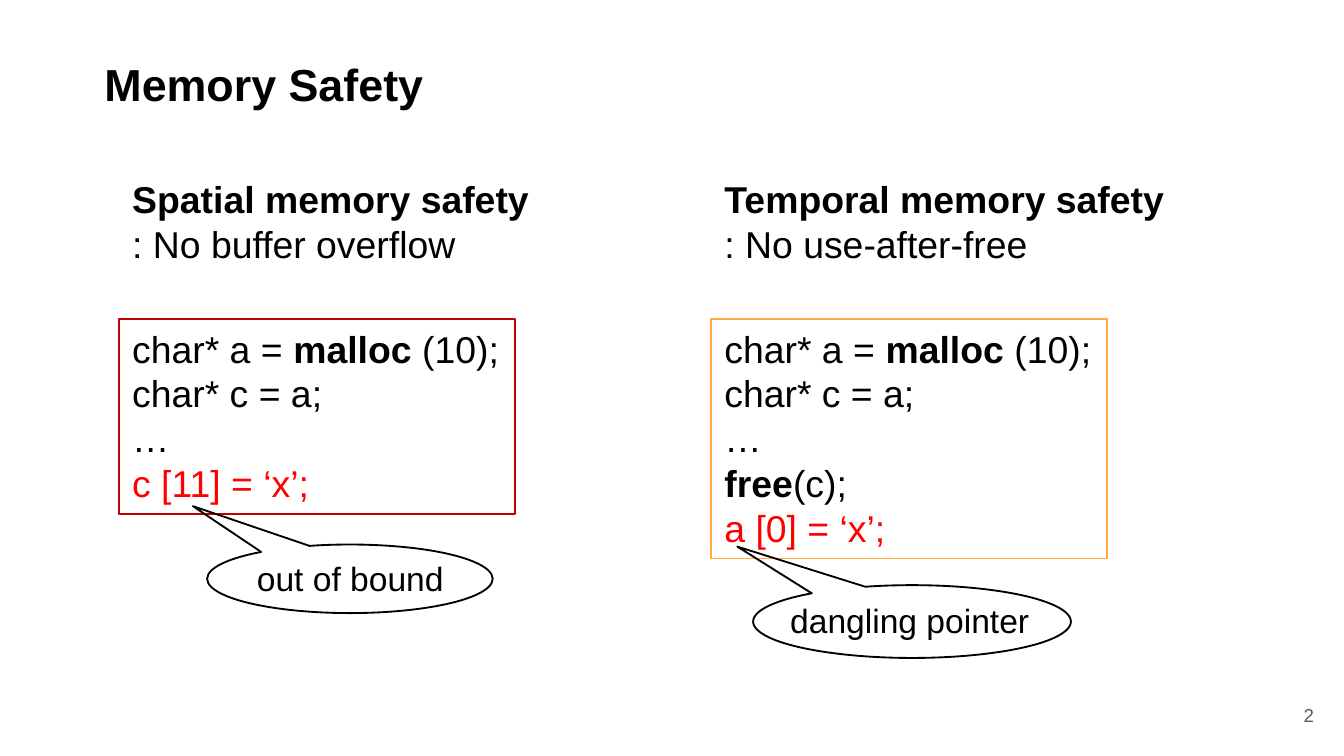
import pptx
import pptx.util
import pptx.dml.color
import pptx.enum.shapes
import pptx.enum.text

PX = 9525  # 96 px to the inch
SLIDE = (960, 540)
BLACK, RED, GRAY, WHITE = "000000", "FF0000", "595959", "FFFFFF"
ALIGN = pptx.enum.text.PP_ALIGN
ANCHOR = pptx.enum.text.MSO_ANCHOR
SHAPE = pptx.enum.shapes.MSO_SHAPE

# A line is a list of runs: (text, bold, colour)
ALLOC = [
    [("char* a = ", False, BLACK), ("malloc ", True, BLACK), ("(10);", False, BLACK)],
    [("char* c = a;", False, BLACK)],
    [("…", False, BLACK)],
]
TITLE = [[("Memory Safety", True, BLACK)]]
PAGE = [[("2", False, GRAY)]]
HEADING_TOP, HEADING_HEIGHT = 121, 74
CODE_TOP, CODE_WIDTH = 228, 283
COLUMNS = [
    {
        "left": 85,
        "heading": [[("Spatial memory safety", True, BLACK)],
                    [(": No buffer overflow", False, BLACK)]],
        "heading_width": 305,
        "code": ALLOC + [[("c [11] = ‘x’;", False, RED)]],
        "code_height": 139,
        "fill": None,
        "border": "C00000",
        "callout": [[("out of bound", False, BLACK)]],
        "callout_box": (148, 389, 204, 49),
        "label_box": (174, 394, 154, 38),
        "tip": (-0.55, -1.06),
    },
    {
        "left": 508,
        "heading": [[("Temporal memory safety", True, BLACK)],
                    [(": No use-after-free", False, BLACK)]],
        "heading_width": 338,
        "code": ALLOC + [[("free", True, BLACK), ("(c);", False, BLACK)],
                         [("a [0] = ‘x’;", False, RED)]],
        "code_height": 171,
        "fill": WHITE,
        "border": "FFAB40",
        "callout": [[("dangling pointer", False, BLACK)]],
        "callout_box": (538, 418, 227, 52),
        "label_box": (555, 424, 196, 38),
        "tip": (-0.55, -1.03),
    },
]


def rgb(color):
    return pptx.dml.color.RGBColor.from_string(color)


def emu(box):
    return [v * PX for v in box]


def write(sp, lines, size, align=ALIGN.LEFT, anchor=ANCHOR.TOP):
    tf = sp.text_frame
    tf.word_wrap = False
    tf.auto_size = pptx.enum.text.MSO_AUTO_SIZE.NONE
    tf.vertical_anchor = anchor
    for i, runs in enumerate(lines):
        p = tf.paragraphs[0] if i == 0 else tf.add_paragraph()
        p.alignment = align
        for text, bold, color in runs:
            r = p.add_run()
            r.text = text
            r.font.name = "Arial"
            r.font.size = pptx.util.Pt(size)
            r.font.bold = bold
            r.font.color.rgb = rgb(color)


def add_text(s, box, lines, size, **layout):
    write(s.shapes.add_textbox(*emu(box)), lines, size, **layout)


def add_outlined(s, kind, box, border, fill=None):
    sp = s.shapes.add_shape(kind, *emu(box))
    sp.shadow.inherit = False
    if fill:
        sp.fill.solid()
        sp.fill.fore_color.rgb = rgb(fill)
    else:
        sp.fill.background()
    sp.line.color.rgb = rgb(border)
    sp.line.width = pptx.util.Pt(1)
    return sp


def add_column(s, col):
    left = col["left"]
    code_box = (left, CODE_TOP, CODE_WIDTH, col["code_height"])
    sp = add_outlined(s, SHAPE.RECTANGLE, code_box, col["border"], col["fill"])
    write(sp, col["code"], 20)

    heading_box = (left, HEADING_TOP, col["heading_width"], HEADING_HEIGHT)
    add_text(s, heading_box, col["heading"], 20)

    sp = add_outlined(s, SHAPE.OVAL_CALLOUT, col["callout_box"], BLACK)
    sp.adjustments[0], sp.adjustments[1] = col["tip"]
    add_text(s, col["label_box"], col["callout"], 18)


def main():
    prs = pptx.Presentation()
    prs.slide_width, prs.slide_height = emu(SLIDE)
    s = prs.slides.add_slide(prs.slide_layouts[5])

    title = s.shapes.title
    title.left, title.top, title.width, title.height = emu((65, 36, 250, 48))
    write(title, TITLE, 24)

    add_text(s, (890, 490, 58, 41), PAGE, 10, align=ALIGN.RIGHT, anchor=ANCHOR.MIDDLE)
    for col in COLUMNS:
        add_column(s, col)
    prs.save("out.pptx")


if __name__ == "__main__":
    main()
